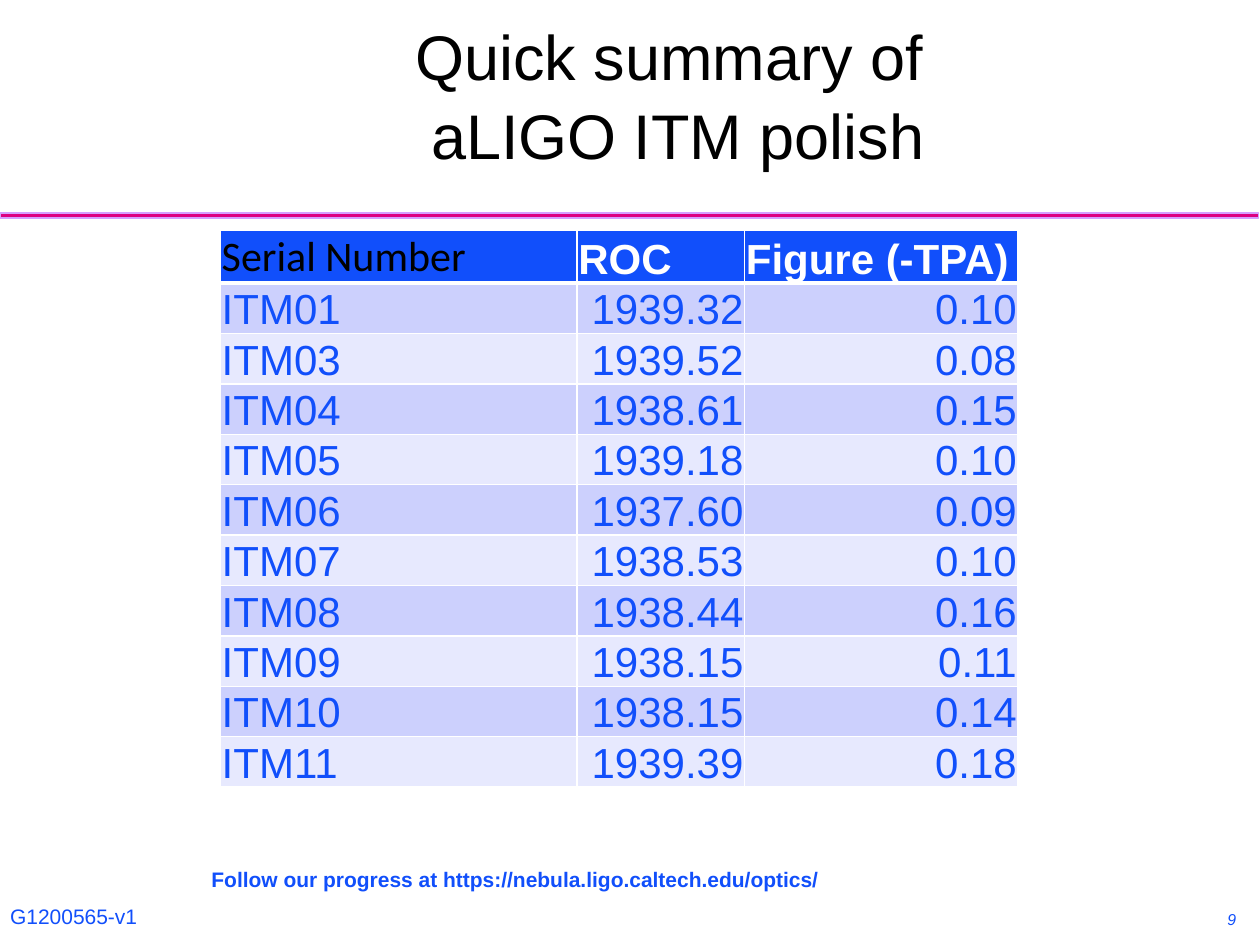
"""Build the slide that sums up the ITM polish results."""
import dataclasses
import typing

import lxml.etree
import pptx
import pptx.dml.color
import pptx.enum.shapes
import pptx.enum.text
import pptx.oxml.ns
import pptx.util

Inches = pptx.util.Inches
Pt = pptx.util.Pt
ALIGN = pptx.enum.text.PP_ALIGN
ANCHOR = pptx.enum.text.MSO_ANCHOR

COLORS = {
    "white": "FFFFFF",
    "black": "000000",
    "blue": "114FFB",
    "dark band": "CCD0FD",
    "light band": "E7E9FE",
    "pink": "DC0081",
    "lilac": "D49FFF",
}


@dataclasses.dataclass
class Style:
    size: float
    color: str = "blue"
    face: str = "Arial"
    bold: bool = False
    slant: bool = False
    align: typing.Any = ALIGN.LEFT


@dataclasses.dataclass
class Label:
    text: str
    box: tuple[float, float, float, float]
    style: Style
    inset: tuple[float, float, float, float] = (0.1, 0.05, 0.1, 0.05)
    anchor: typing.Any = ANCHOR.TOP
    grow: bool = True


LABELS = [
    Label("G1200565-v1", (0.08, 7.17, 1.02, 0.4), Style(12), inset=(0, 0, 0, 0)),
    Label("9", (7.83, 6.92, 2.08, 0.5), Style(9, slant=True, align=ALIGN.RIGHT),
          anchor=ANCHOR.BOTTOM, grow=False),
    Label("Follow our progress at https://nebula.ligo.caltech.edu/optics/",
          (1.58, 6.83, 5.07, 0.3), Style(12, bold=True)),
]

HEADS = ["Serial Number", "ROC", "Figure (-TPA)"]
ROWS = [
    ("ITM01", "1939.32", "0.10"),
    ("ITM03", "1939.52", "0.08"),
    ("ITM04", "1938.61", "0.15"),
    ("ITM05", "1939.18", "0.10"),
    ("ITM06", "1937.60", "0.09"),
    ("ITM07", "1938.53", "0.10"),
    ("ITM08", "1938.44", "0.16"),
    ("ITM09", "1938.15", "0.11"),
    ("ITM10", "1938.15", "0.14"),
    ("ITM11", "1939.39", "0.18"),
]
WIDTHS = [2.83, 1.33, 2.17]
HEIGHT = 0.4


def tint(name: str) -> pptx.dml.color.RGBColor:
    return pptx.dml.color.RGBColor.from_string(COLORS[name])


def add_run(para: typing.Any, text: str, style: Style) -> None:
    para.alignment = style.align
    run = para.add_run()
    run.text = text
    font = run.font
    font.name, font.size = style.face, Pt(style.size)
    font.bold, font.italic = style.bold, style.slant
    font.color.rgb = tint(style.color)


def set_inset(item: typing.Any, inset: tuple[float, float, float, float]) -> None:
    (item.margin_left, item.margin_top,
     item.margin_right, item.margin_bottom) = map(Inches, inset)


def draw_label(slide: typing.Any, label: Label) -> None:
    frame = slide.shapes.add_textbox(*map(Inches, label.box)).text_frame
    set_inset(frame, label.inset)
    frame.word_wrap = False
    frame.vertical_anchor = label.anchor
    if label.grow:
        frame.auto_size = pptx.enum.text.MSO_AUTO_SIZE.SHAPE_TO_FIT_TEXT
    add_run(frame.paragraphs[0], label.text, label.style)


def draw_title(slide: typing.Any) -> None:
    title = slide.shapes.title
    title.left, title.top, title.width, title.height = map(
        Inches, (1.42, 0.17, 7.92, 1.25))
    frame = title.text_frame
    set_inset(frame, (0.1, 0.05, 0.1, 0.05))
    frame.word_wrap = True
    frame.auto_size = pptx.enum.text.MSO_AUTO_SIZE.NONE
    frame.vertical_anchor = ANCHOR.BOTTOM
    para = frame.paragraphs[0]
    para.line_spacing = 1.05
    style = Style(36, "black", align=ALIGN.CENTER)
    add_run(para, "Quick summary of ", style)
    para.add_line_break()
    add_run(para, "aLIGO ITM polish", style)


def draw_bar(slide: typing.Any) -> None:
    bar = slide.shapes.add_shape(pptx.enum.shapes.MSO_SHAPE.RECTANGLE,
                                 *map(Inches, (0, 1.69, 9.99, 0.04)))
    bar.shadow.inherit = False
    bar.fill.solid()
    bar.fill.fore_color.rgb = tint("pink")
    bar.line.color.rgb = tint("lilac")
    bar.line.width = Pt(0.75)


def add_edge(cell: typing.Any, side: str, width: float) -> None:
    name = pptx.oxml.ns.qn
    props = cell._tc.get_or_add_tcPr()
    edge = lxml.etree.SubElement(props, name(f"a:ln{side}"), w=str(Pt(width)))
    fill = lxml.etree.SubElement(edge, name("a:solidFill"))
    lxml.etree.SubElement(fill, name("a:srgbClr"), val=COLORS["white"])


def fill_cell(cell: typing.Any, text: str, style: Style, back: str,
              top: float, base: float) -> None:
    for side, width in (("L", 1), ("R", 1), ("T", top), ("B", base)):
        add_edge(cell, side, width)
    cell.fill.solid()
    cell.fill.fore_color.rgb = tint(back)
    set_inset(cell, (0.01, 0.01, 0.01, 0))
    cell.vertical_anchor = ANCHOR.BOTTOM
    add_run(cell.text_frame.paragraphs[0], text, style)


def draw_table(slide: typing.Any) -> None:
    count = len(ROWS) + 1
    grid = slide.shapes.add_table(
        count, len(HEADS), Inches(1.75), Inches(1.83),
        Inches(sum(WIDTHS)), Inches(count * HEIGHT)).table
    for col, width in zip(grid.columns, WIDTHS):
        col.width = Inches(width)
    for row in grid.rows:
        row.height = Inches(HEIGHT)
    for x, text in enumerate(HEADS):
        style = Style(24, "white", bold=True) if x else Style(24, "black", "Calibri")
        fill_cell(grid.cell(0, x), text, style, "blue", 1, 3)
    for y, row in enumerate(ROWS, 1):
        back = "dark band" if y % 2 else "light band"
        for x, text in enumerate(row):
            style = Style(24, align=ALIGN.RIGHT if x else ALIGN.LEFT)
            fill_cell(grid.cell(y, x), text, style, back, 3 if y == 1 else 1, 1)


def main() -> None:
    deck = pptx.Presentation()
    deck.slide_width, deck.slide_height = Inches(10), Inches(7.5)
    slide = deck.slides.add_slide(deck.slide_layouts[5])
    draw_bar(slide)
    draw_title(slide)
    draw_table(slide)
    for label in LABELS:
        draw_label(slide, label)
    deck.save("out.pptx")


if __name__ == "__main__":
    main()
